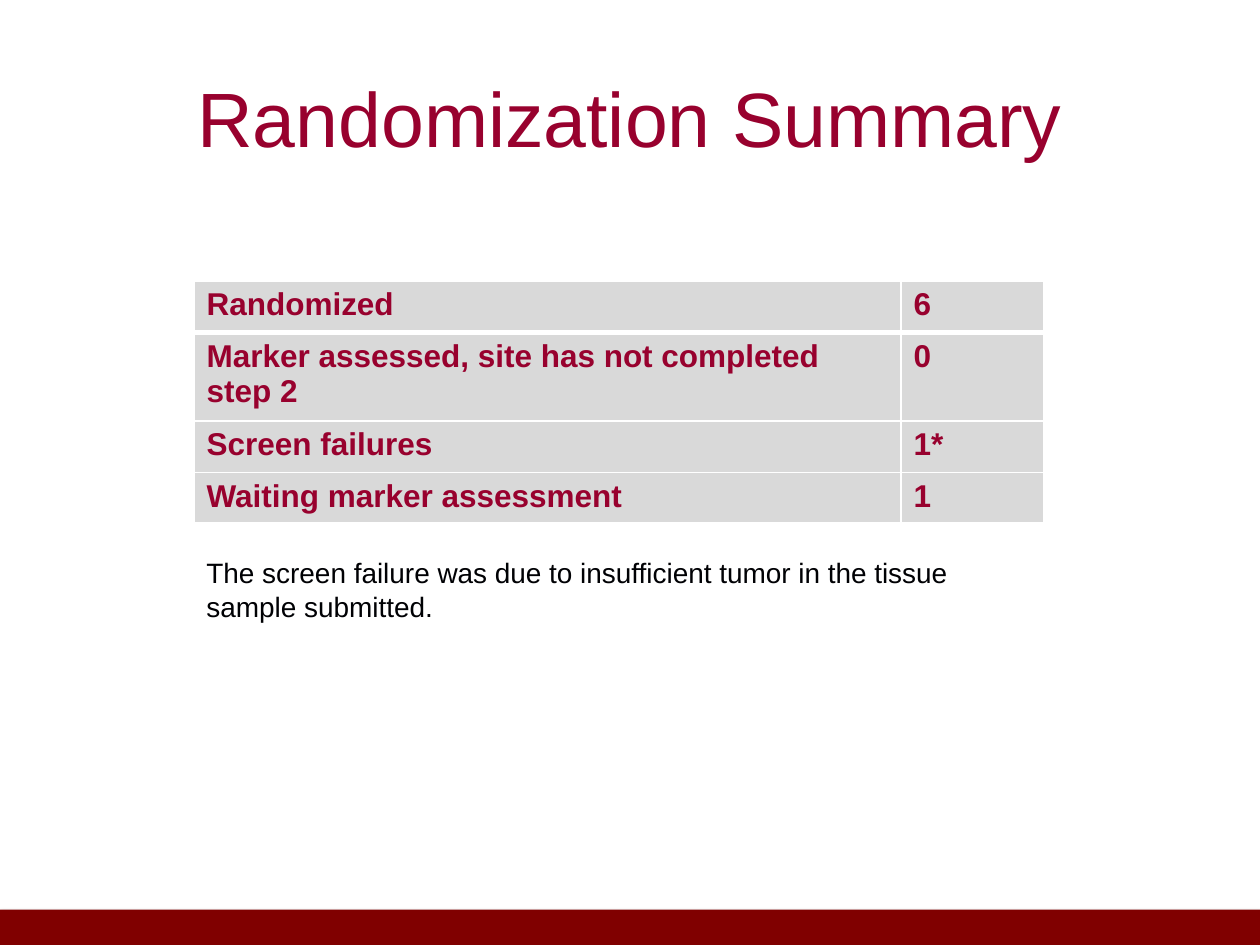
"""Build the Randomization Summary slide."""
from lxml import etree
from pptx import Presentation
from pptx.dml.color import RGBColor
from pptx.enum import shapes, text
from pptx.oxml import ns
from pptx.util import Inches, Pt

TITLE = "Randomization Summary"
ROWS = [
    ("Randomized", "6"),
    ("Marker assessed, site has not completed step 2", "0"),
    ("Screen failures", "1*"),
    ("Waiting marker assessment", "1"),
]
NOTE = ("The screen failure was due to insufficient tumor "
        "in the tissue sample submitted.")
COLS = (5.61, 1.13)
HIGH = (0.41, 0.41, 0.41, 0.39)
LEFT = 1.54

WINE = RGBColor(0x98, 0x01, 0x2E)
MAROON = RGBColor(0x80, 0x00, 0x00)
GRAY = RGBColor(0xD9, 0xD9, 0xD9)
WHITE = RGBColor(0xFF, 0xFF, 0xFF)
INK = RGBColor(0x00, 0x01, 0x04)


def style(para, size, color, bold=False):
    font = para.font
    font.name, font.size, font.bold = "Arial", Pt(size), bold
    font.color.rgb = color


def add(root, tag, **attrs):
    return etree.SubElement(root, ns.qn(tag), attrs)


def add_text(slide, words, box, size, color):
    frame = slide.shapes.add_textbox(*map(Inches, box)).text_frame
    frame.word_wrap = True
    para = frame.paragraphs[0]
    para.text = words
    style(para, size, color)
    return frame


def add_bar(slide):
    bar = slide.shapes.add_shape(
        shapes.MSO_SHAPE.RECTANGLE, 0, Inches(7.22), Inches(10), Inches(0.28))
    bar.shadow.inherit = False
    bar.fill.solid()
    bar.fill.fore_color.rgb = MAROON
    bar.line.fill.background()
    glow = add(bar.element.spPr.find(ns.qn("a:effectLst")), "a:outerShdw",
               blurRad=str(Pt(3.1)), dist=str(Pt(1.8)), dir="5400000",
               rotWithShape="0")
    tint = add(glow, "a:srgbClr", val="000000")
    add(tint, "a:alpha", val="35000")


def edge(cell, top, base):
    props = cell._tc.get_or_add_tcPr()
    widths = {"a:lnL": 1, "a:lnR": 1, "a:lnT": top, "a:lnB": base}
    for tag, width in widths.items():
        line = add(props, tag, w=str(Pt(width)))
        add(add(line, "a:solidFill"), "a:srgbClr", val=str(WHITE))


def add_grid(slide):
    grid = slide.shapes.add_table(
        len(ROWS), len(COLS), Inches(LEFT), Inches(2.23),
        Inches(sum(COLS)), Inches(sum(HIGH))).table
    for col, width in zip(grid.columns, COLS):
        col.width = Inches(width)
    for r, (row, values) in enumerate(zip(grid.rows, ROWS)):
        row.height = Inches(HIGH[r])
        for cell, value in zip(row.cells, values):
            cell.text = value
            style(cell.text_frame.paragraphs[0], 18, WINE, True)
            edge(cell, 3 if r == 1 else 1, 3 if r == 0 else 1)
            cell.fill.solid()
            cell.fill.fore_color.rgb = GRAY


def main():
    deck = Presentation()
    deck.slide_width, deck.slide_height = Inches(10), Inches(7.5)
    slide = deck.slides.add_slide(deck.slide_layouts[6])
    add_bar(slide)
    title = add_text(slide, TITLE, (0.5, 0.3, 9, 1.25), 44, WINE)
    title.vertical_anchor = text.MSO_ANCHOR.MIDDLE
    title.paragraphs[0].alignment = text.PP_ALIGN.CENTER
    add_grid(slide)
    note = add_text(slide, NOTE, (LEFT, 4.36, 6.66, 0.64), 16, INK)
    note.auto_size = text.MSO_AUTO_SIZE.SHAPE_TO_FIT_TEXT
    deck.save("out.pptx")


if __name__ == "__main__":
    main()
